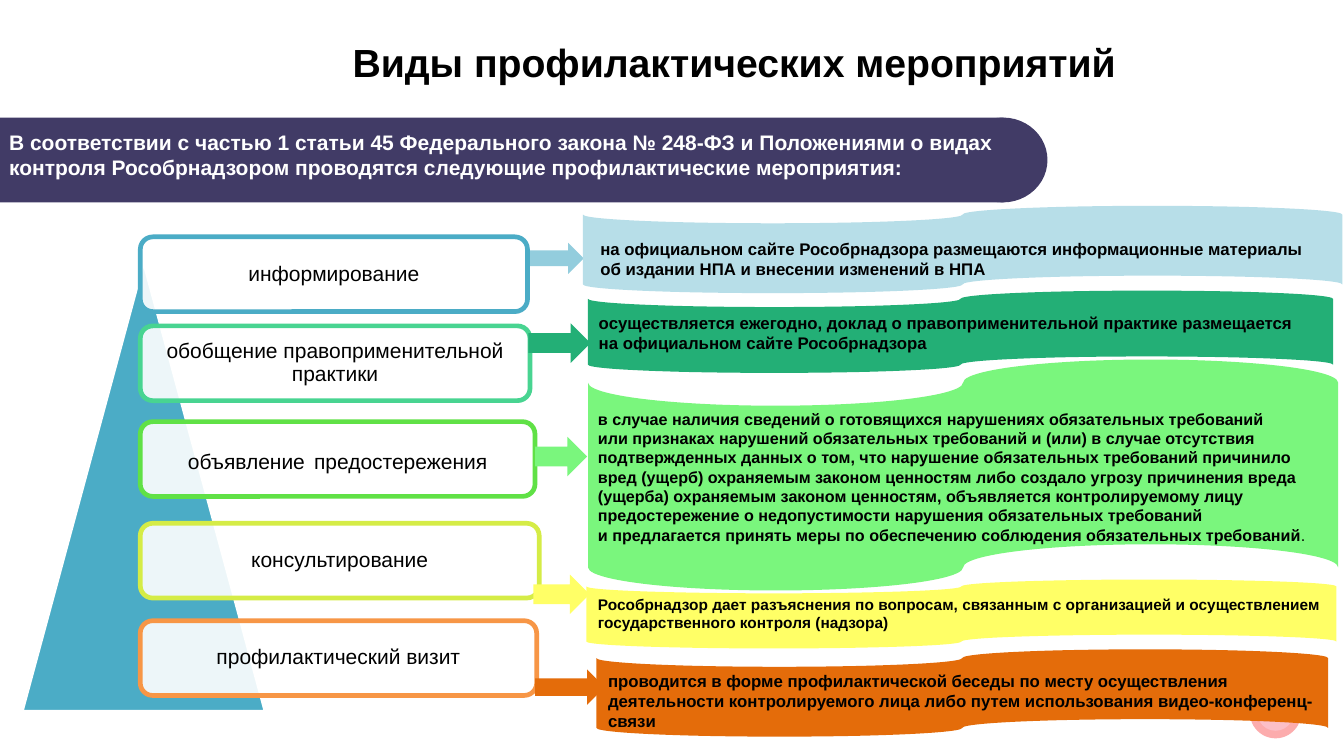
from copy import deepcopy
from dataclasses import dataclass

from lxml import etree
from pptx import Presentation
from pptx import util as u
from pptx.dml.color import RGBColor
from pptx.enum import shapes, text
from pptx.oxml.ns import qn


@dataclass(frozen=True)
class Theme:
    """Colours and type sizes of the slide."""
    font: str = "Arial"
    ink: str = "000000"
    paper: str = "FFFFFF"
    banner: str = "413B66"
    pyramid: str = "4BACC6"
    ring: str = "FCACAD"
    ring_core: str = "FCBFC7"
    title_size: float = 28
    label_size: float = 15
    gap_size: float = 23
    note_size: float = 12
    dense_size: float = 11.5
    small_size: float = 11
    outline: float = 3.35


@dataclass(frozen=True)
class Measure:
    """One preventive measure: its label, arrow, tape and explanation."""
    label: list
    label_top: float
    label_width: float
    border: str
    arrow: tuple
    arrow_colour: str
    tape: tuple
    tape_colour: str
    note_place: tuple
    note_size: float
    note: list


def write(frame, runs, *, font, size, colour, bold=False, align=None,
          anchor=text.MSO_ANCHOR.TOP, inset=None, spacing=None):
    """Fill a text frame with one paragraph of (wording, overrides) runs."""
    frame.word_wrap = True
    frame.auto_size = text.MSO_AUTO_SIZE.NONE
    frame.vertical_anchor = anchor
    if inset is not None:
        frame.margin_left = frame.margin_right = u.Inches(inset)
        frame.margin_top = frame.margin_bottom = u.Inches(inset)
    paragraph = frame.paragraphs[0]
    paragraph.alignment = align or text.PP_ALIGN.LEFT
    if spacing:
        paragraph.line_spacing = spacing
    for wording, changes in runs:
        for row, line in enumerate(wording.split("\n")):
            if row:
                paragraph.add_line_break()
                line_break = paragraph._p.findall(qn("a:br"))[-1]
                line_break.append(deepcopy(run.font._element))
            run = paragraph.add_run()
            run.text = line
            run.font.name = font
            run.font.size = u.Pt(changes.get("size", size))
            run.font.bold = changes.get("bold", bold)
            run.font.color.rgb = RGBColor.from_string(colour)


class Board:
    """The current slide on a grid of 160 columns by 90 rows."""

    def __init__(self, deck, theme):
        """Open a title-only slide."""
        self.theme = theme
        self.slide = deck.slides.add_slide(deck.slide_layouts[5])
        self.column = deck.slide_width / 160
        self.row = deck.slide_height / 90

    def place(self, left, top, width, height):
        """Turn grid cells into lengths."""
        return [round(left * self.column), round(top * self.row),
                round(width * self.column), round(height * self.row)]

    def title(self, wording, cells):
        """Write the heading in the title placeholder."""
        heading = self.slide.shapes.title
        heading.left, heading.top, heading.width, heading.height = self.place(*cells)
        write(heading.text_frame, [(wording, {})], font=self.theme.font,
              size=self.theme.title_size, colour=self.theme.ink, bold=True,
              align=text.PP_ALIGN.CENTER)

    def figure(self, preset, cells, fill, border=None, opacity=None):
        """Draw a filled preset shape."""
        shape = self.slide.shapes.add_shape(preset, *self.place(*cells))
        shape.shadow.inherit = False
        shape.fill.solid()
        shape.fill.fore_color.rgb = RGBColor.from_string(fill)
        if opacity:
            tint = shape._element.spPr.find(qn("a:solidFill"))[0]
            etree.SubElement(tint, qn("a:alpha")).set("val", str(opacity * 1000))
        if border:
            shape.line.color.rgb = RGBColor.from_string(border)
            shape.line.width = u.Pt(self.theme.outline)
        else:
            shape.line.fill.background()
        return shape

    def label(self, runs, cells, border):
        """Draw a rounded box with the name of a measure."""
        box = self.figure(shapes.MSO_SHAPE.ROUNDED_RECTANGLE, cells,
                          self.theme.paper, border, opacity=90)
        write(box.text_frame, runs, font=self.theme.font,
              size=self.theme.label_size, colour=self.theme.ink,
              align=text.PP_ALIGN.CENTER, anchor=text.MSO_ANCHOR.MIDDLE,
              inset=0.1, spacing=0.9)

    def note(self, runs, cells, size, colour):
        """Write a bold explanation in a text box."""
        box = self.slide.shapes.add_textbox(*self.place(*cells))
        write(box.text_frame, runs, font=self.theme.font, size=size,
              colour=colour, bold=True)


THEME = Theme()
MEASURES = [
    Measure([("информирование", {})], 28.2, 46.1, "4BACC6",
            (63.1, 28.9, 6.4, 3.7), "93CDDD", (69.4, 24.5, 90.4, 10.4), "B7DEE8",
            (70.3, 27.8, 90.4, 6), THEME.note_size,
            [("на официальном сайте Рособрнадзора размещаются информационные материалы \n"
              "об издании НПА и внесении изменений в НПА", {})]),
    Measure([("обобщение правоприменительной практики", {})], 38.8, 46.4, "48D491",
            (62.9, 38.5, 7.4, 4.7), "23AF76", (70, 34.6, 88.7, 9.8), "23AF76",
            (70.1, 36.6, 87.8, 6), THEME.note_size,
            [("осуществляется ежегодно, доклад о правоприменительной практике размещается "
              "на официальном сайте Рособрнадзора", {})]),
    Measure([("объявление", {}), (" ", {"size": THEME.gap_size}),
             ("предостережения", {})], 50.2, 47, "60E146",
            (63.7, 52, 6.2, 4.7), "7AF67D", (70, 42.8, 89.3, 27.5), "7AF67D",
            (70, 48.1, 89.3, 17.5), THEME.dense_size,
            [("в случае наличия сведений о готовящихся нарушениях обязательных требований \n"
              "или признаках нарушений обязательных требований и (или) в случае отсутствия "
              "подтвержденных данных о том, что нарушение обязательных требований причинило "
              "вред (ущерб) охраняемым законом ценностям либо создало угрозу причинения вреда "
              "(ущерба) охраняемым законом ценностям, объявляется контролируемому лицу "
              "предостережение о недопустимости нарушения обязательных требований \n"
              "и предлагается принять меры по обеспечению соблюдения обязательных требований",
              {}), (".", {"bold": False})]),
    Measure([("консультирование", {})], 62.3, 47.5, "D5EC46",
            (63.5, 68.4, 6.7, 4.7), "FFFF66", (69.8, 69, 89.3, 8.2), "FFFF66",
            (70, 70.2, 90.1, 5.6), THEME.small_size,
            [("Рособрнадзор дает разъяснения по вопросам, связанным с организацией и "
              "осуществлением государственного контроля (надзора)", {})]),
    Measure([("профилактический визит", {})], 73.9, 47.2, "F79646",
            (63.7, 79.7, 8.3, 4.2), "E46C0A", (71, 77.3, 87.1, 10.4), "E46C0A",
            (71.2, 79.2, 88.8, 8.5), THEME.note_size,
            [("проводится в форме профилактической беседы по месту осуществления "
              "деятельности контролируемого лица либо путем использования "
              "видео-конференц-связи", {})]),
]


def main():
    """Build and save the slide."""
    deck = Presentation()
    deck.slide_width, deck.slide_height = u.Inches(13.33), u.Inches(7.5)
    board = Board(deck, THEME)
    preset = shapes.MSO_SHAPE
    board.title("Виды профилактических мероприятий", (20.2, 4, 134.4, 9.1))
    board.figure(preset.OVAL, (148.8, 81.8, 6.1, 6.1), THEME.ring)
    board.figure(preset.OVAL, (149.7, 82.7, 4.3, 4.3), THEME.ring_core)
    board.figure(preset.RECTANGLE, (0, 14, 119.5, 10.1), THEME.banner)
    board.figure(preset.OVAL, (114.1, 14, 10.6, 10.1), THEME.banner)
    board.note([("В соответствии с частью 1 статьи 45 Федерального закона № 248-ФЗ и "
                 "Положениями о видах контроля Рособрнадзором проводятся следующие "
                 "профилактические мероприятия:", {})],
               (-0.1, 14.8, 123.6, 7.3), THEME.label_size, THEME.paper)
    board.figure(preset.ISOSCELES_TRIANGLE, (2.5, 30.8, 29.2, 54), THEME.pyramid,
                 THEME.paper)
    for measure in MEASURES:
        board.label(measure.label, (16.7, measure.label_top, measure.label_width, 8.9),
                    measure.border)
    for measure in MEASURES:
        board.figure(preset.RIGHT_ARROW, measure.arrow, measure.arrow_colour)
    for measure in MEASURES:
        board.figure(preset.FLOWCHART_PUNCHED_TAPE, measure.tape, measure.tape_colour)
    for measure in MEASURES:
        board.note(measure.note, measure.note_place, measure.note_size, THEME.ink)
    deck.save("out.pptx")


if __name__ == "__main__":
    main()
